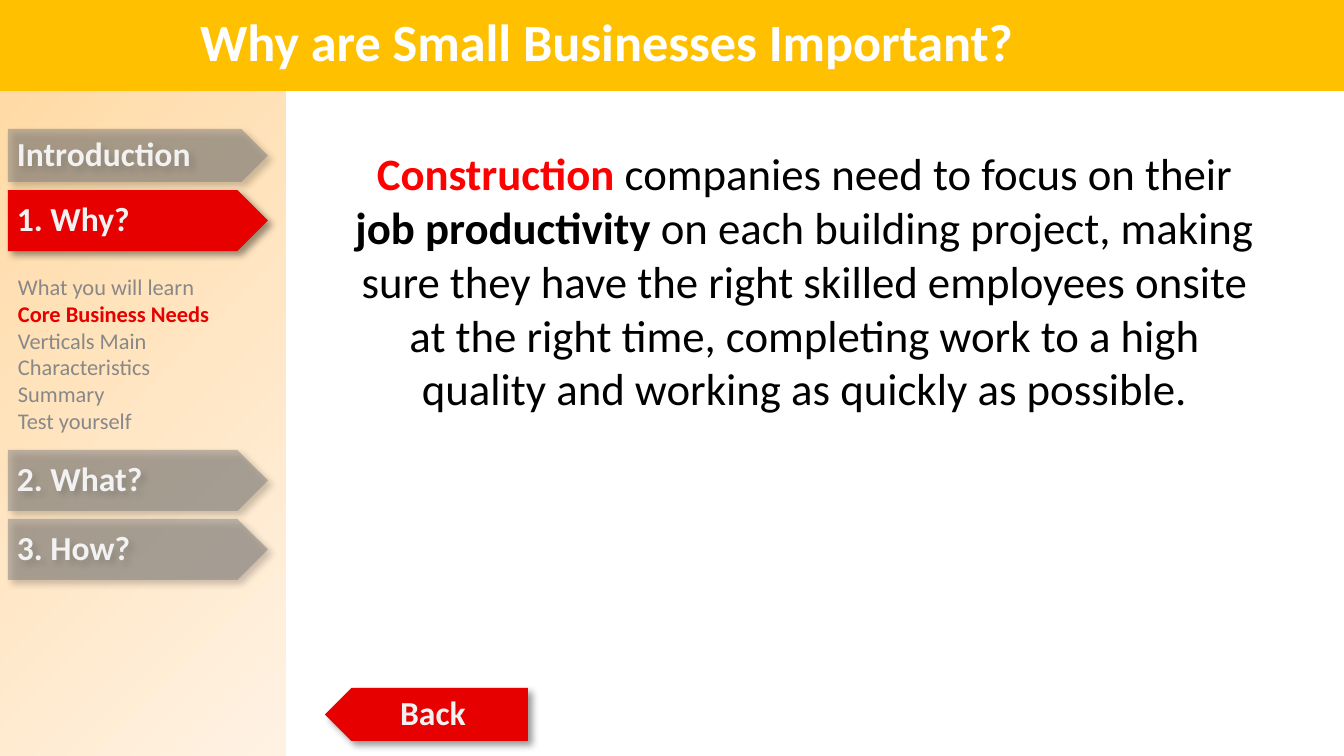
from lxml import etree
from pptx import Presentation
from pptx import util as u
from pptx.dml.color import RGBColor
from pptx.enum import shapes, text
from pptx.oxml.ns import qn

PX = 914400 / 134.4
FONT = "Calibri"
RED, GREY, WHITE, PALE = "E60000", "808080", "FFFFFF", "F2F2F2"
LEFT, CENTER = text.PP_ALIGN.LEFT, text.PP_ALIGN.CENTER

TITLE = "Why are Small Businesses Important?"
# label, top, height, active
STEPS = [
    ("Introduction", 129, 53, False),
    ("1. Why?", 190, 61, True),
    ("2. What?", 450, 61, False),
    ("3. How?", 519, 61, False),
]
TOPICS = ["What you will learn", "Core Business Needs",
          "Verticals Main Characteristics", "Summary", "Test yourself"]
CURRENT_TOPIC = "Core Business Needs"
# text, colour, bold
BODY = [
    ("Construction ", "FF0000", True),
    ("companies need to focus on their ", "000000", False),
    ("job productivity", "000000", True),
    (" on each building project, making sure they have the right skilled "
     "employees onsite at the right time, completing work to a high quality "
     "and working as quickly as possible.", "000000", False),
]


def px(n):
    return u.Emu(round(n * PX))


def rgb(value):
    return RGBColor.from_string(value)


def style(r, size, color, bold=False):
    r.font.name, r.font.size, r.font.bold = FONT, u.Pt(size), bold
    r.font.color.rgb = rgb(color)


def set_frame(tf, anchor, inset=0, left=0):
    tf.word_wrap = True
    tf.vertical_anchor = anchor
    tf.margin_top = tf.margin_right = tf.margin_bottom = px(inset)
    tf.margin_left = px(left)


def add_text(s, box, anchor=text.MSO_ANCHOR.TOP):
    tf = s.shapes.add_textbox(*map(px, box)).text_frame
    set_frame(tf, anchor)
    return tf


def add_shape(s, kind, box, color=None):
    sp = s.shapes.add_shape(kind, *map(px, box))
    sp.shadow.inherit = False
    sp.line.fill.background()
    if color:
        sp.fill.solid()
        sp.fill.fore_color.rgb = rgb(color)
    return sp


def add_alpha(color, percent):
    etree.SubElement(color, qn("a:alpha"), val=str(percent * 1000))


def add_shadow(sp):
    effects = sp._element.spPr.find(qn("a:effectLst"))
    shadow = etree.SubElement(
        effects, qn("a:outerShdw"), blurRad=str(u.Pt(4)), dist=str(u.Pt(3)),
        dir="2700000", algn="tl", rotWithShape="0")
    add_alpha(etree.SubElement(shadow, qn("a:srgbClr"), val="000000"), 40)


def add_arrow(s, label, box, active, align=LEFT, left=9):
    sp = add_shape(s, shapes.MSO_SHAPE.PENTAGON, box, RED if active else GREY)
    if not active:
        add_alpha(sp._element.spPr.find(qn("a:solidFill"))[0], 50)
    add_shadow(sp)
    tf = sp.text_frame
    set_frame(tf, text.MSO_ANCHOR.MIDDLE, 1, left)
    tf.text = label
    p = tf.paragraphs[0]
    p.alignment, p.line_spacing = align, 0.9
    style(p.runs[0], 18, PALE, True)
    return sp


prs = Presentation()
prs.slide_width, prs.slide_height = px(1344), px(756)
s = prs.slides.add_slide(prs.slide_layouts[6])

tf = add_text(s, (343, 146, 923, 163))
p = tf.paragraphs[0]
p.alignment = CENTER
for words, color, bold in BODY:
    r = p.add_run()
    r.text = words
    style(r, 24, color, bold)

back = add_arrow(s, "Back", (325, 688, 203, 53), True, CENTER, 1)
back._element.spPr.find(qn("a:xfrm")).set("flipH", "1")

sidebar = add_shape(s, shapes.MSO_SHAPE.RECTANGLE, (0, 0, 286, 756))
sidebar.fill.gradient()
sidebar.fill.gradient_angle = 315
for stop, color in zip(sidebar.fill.gradient_stops, ("FFD8A0", "FFF2E3")):
    stop.color.rgb = rgb(color)

add_shape(s, shapes.MSO_SHAPE.RECTANGLE, (0, 0, 1344, 91), "FFC000")
for label, top, height, active in STEPS:
    add_arrow(s, label, (8, top, 260, height), active)

tf = add_text(s, (18, 273, 260, 483))
tf.text = "\n".join(TOPICS)
for p in tf.paragraphs:
    current = p.text == CURRENT_TOPIC
    style(p.runs[0], 12, RED if current else "888888", current)

tf = add_text(s, (200, -4, 960, 90), text.MSO_ANCHOR.MIDDLE)
tf.text = TITLE
style(tf.paragraphs[0].runs[0], 28, WHITE, True)

prs.save("out.pptx")
